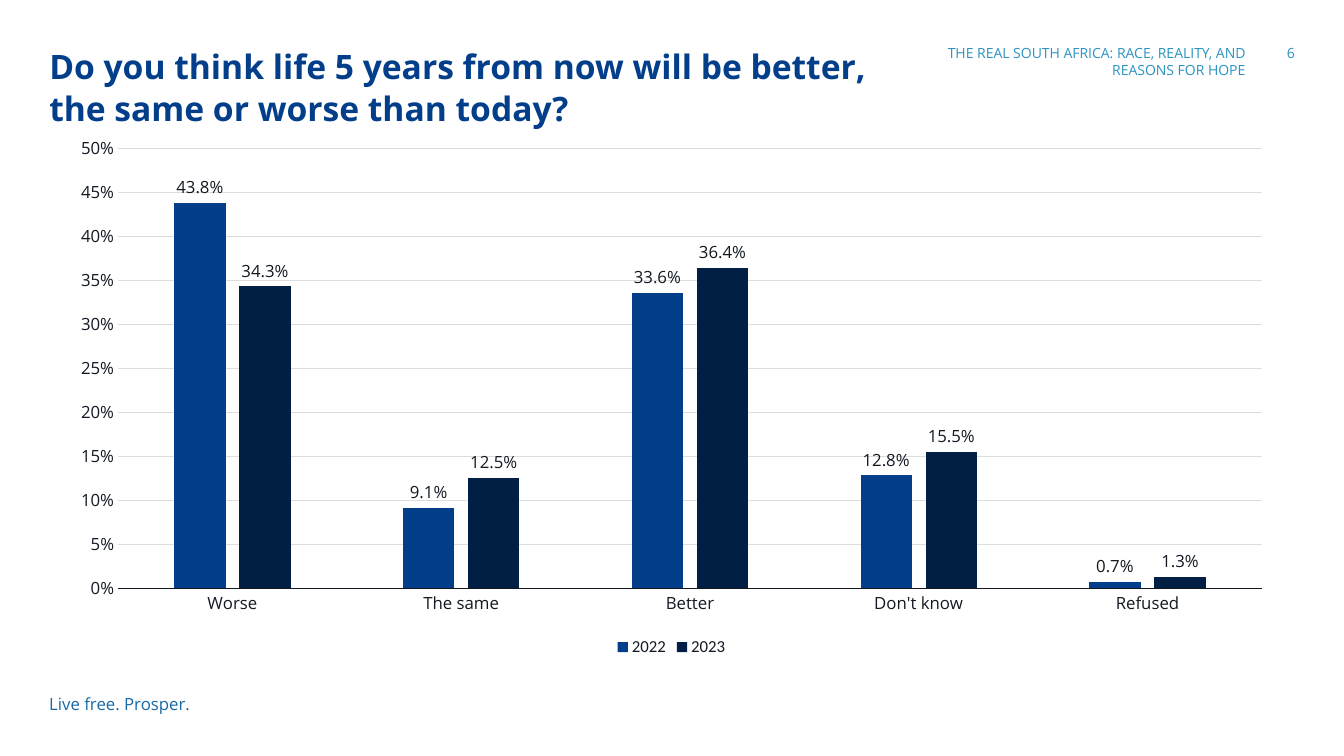
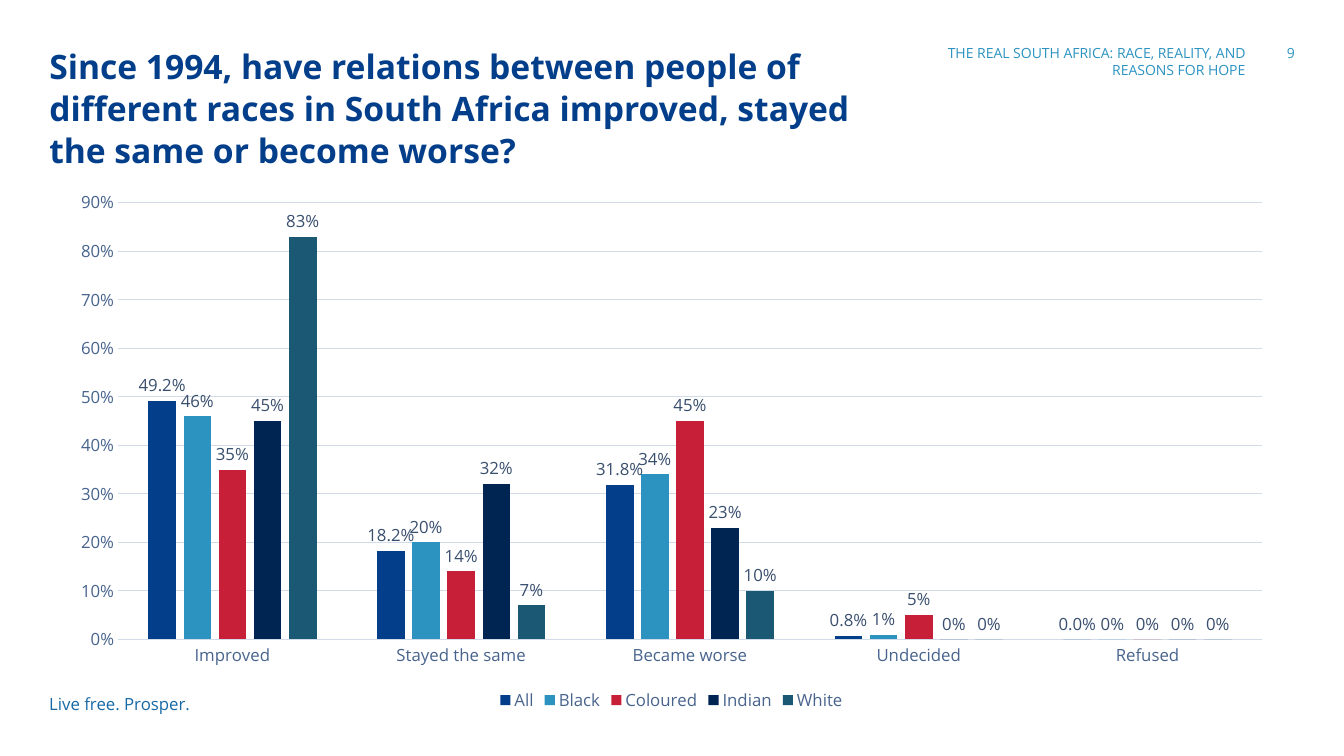
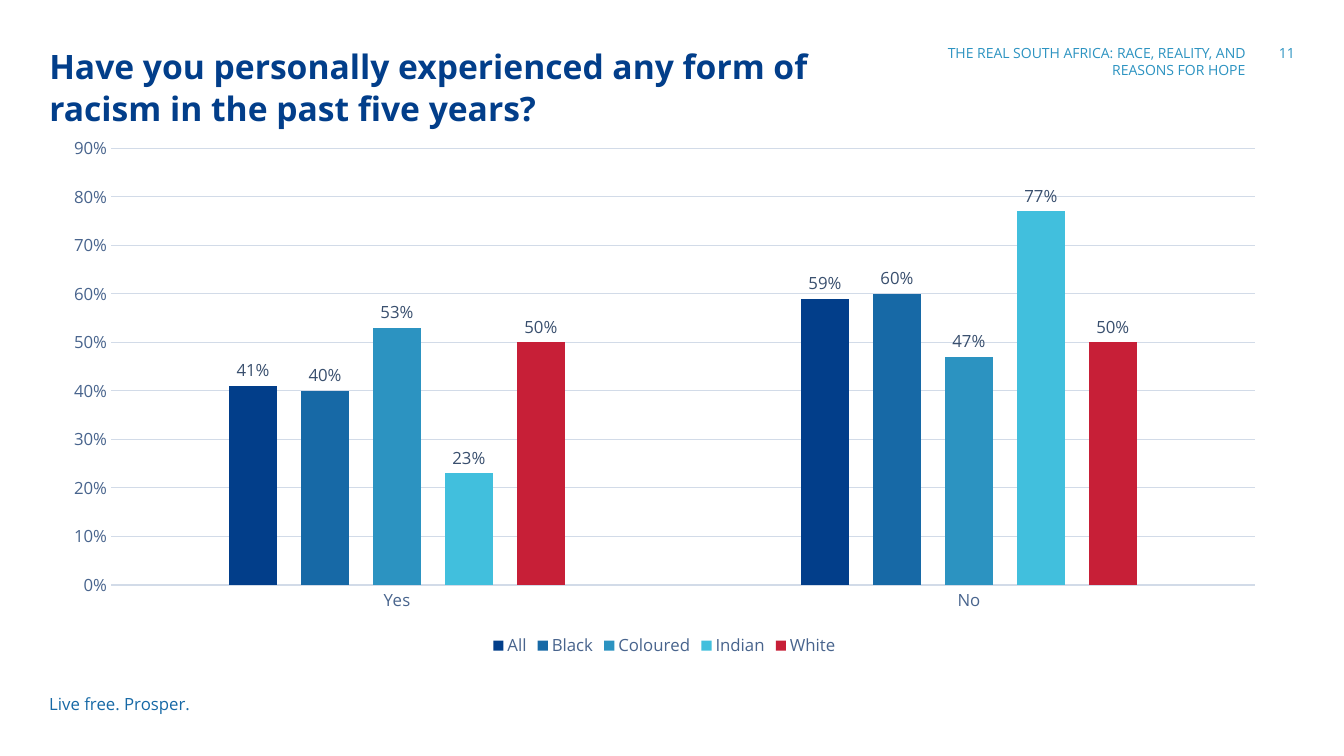
"""Builds three survey slides, each a question over a clustered column chart."""
from pptx import Presentation
from pptx.chart.data import CategoryChartData
from pptx.dml.color import RGBColor
from pptx.enum.chart import XL_CHART_TYPE, XL_LABEL_POSITION, XL_LEGEND_POSITION, XL_TICK_MARK
from pptx.enum.text import MSO_AUTO_SIZE, PP_ALIGN
from pptx.util import Pt

PX = 9144
FACE = "Open Sans"
HUES = {
    "navy": "023E8A", "blue": "1769A6", "sky": "2C93C1", "aqua": "41BFDD",
    "red": "C71F37", "night": "011F45", "ink": "012553", "teal": "1A5874",
    "black": "121923", "slate": "48648D", "dusk": "394F6E",
    "mist": "D2DBE8", "grey": "DDDDDD",
}


def style(font, hue, size=12, face=FACE, bold=False):
    font.name, font.size, font.bold = face, Pt(size), bold
    font.color.rgb = RGBColor.from_string(HUES[hue])


def write(slide, text, area, wrap=True, align=PP_ALIGN.LEFT, lead=None, **look):
    box = slide.shapes.add_textbox(*[n * PX for n in area])
    frame = box.text_frame
    frame.word_wrap = wrap
    frame.auto_size = MSO_AUTO_SIZE.NONE if wrap else MSO_AUTO_SIZE.SHAPE_TO_FIT_TEXT
    para = frame.paragraphs[0]
    para.alignment = align
    if lead:
        para.line_spacing = Pt(lead)
    run = para.add_run()
    run.text = text
    style(run.font, **look)


dark = {"axis": "black", "label": "black", "line": "black", "grid": "grey", "key": "Calibri"}
pale = {"axis": "slate", "label": "dusk", "line": "mist", "grid": "mist", "key": FACE}

pages = [
    {
        "num": 6,
        "title": "Do you think life 5 years from now will be better, the same or worse than today?",
        "left": 56, "top": 125, "look": dark, "gap": 219, "lap": -27, "max": 0.5, "step": 0.05,
        "cats": ["Worse", "The same", "Better", "Don't know", "Refused"],
        "rows": [
            ("2022", "navy", "0.0%", [0.438, 0.091, 0.336, 0.128, 0.007]),
            ("2023", "night", "0.0%", [0.343, 0.125, 0.364, 0.155, 0.013]),
        ],
    },
    {
        "num": 9,
        "title": "Since 1994, have relations between people of different races in South Africa "
                 "improved, stayed the same or become worse?",
        "left": 56, "top": 179, "look": pale, "gap": 219, "lap": -27, "max": 0.9, "step": 0.1,
        "cats": ["Improved", "Stayed the same", "Became worse", "Undecided", "Refused"],
        "rows": [
            ("All", "navy", "0.0%", [0.492, 0.182, 0.318, 0.008, 0]),
            ("Black", "sky", "0%", [0.46, 0.2, 0.34, 0.01, 0]),
            ("Coloured", "red", "0%", [0.35, 0.14, 0.45, 0.05, 0]),
            ("Indian", "ink", "0%", [0.45, 0.32, 0.23, 0, 0]),
            ("White", "teal", "0%", [0.83, 0.07, 0.1, 0, 0]),
        ],
    },
    {
        "num": 11,
        "title": "Have you personally experienced any form of racism in the past five years?",
        "left": 49, "top": 125, "look": pale, "gap": 500, "lap": -52, "max": 0.9, "step": 0.1,
        "cats": ["Yes", "No"],
        "rows": [
            ("All", "navy", "0%", [0.41, 0.59]),
            ("Black", "blue", "0%", [0.4, 0.6]),
            ("Coloured", "sky", "0%", [0.53, 0.47]),
            ("Indian", "aqua", "0%", [0.23, 0.77]),
            ("White", "red", "0%", [0.5, 0.5]),
        ],
    },
]

deck = Presentation()
deck.slide_width, deck.slide_height = 1333 * PX, 750 * PX

for page in pages:
    slide = deck.slides.add_slide(deck.slide_layouts[6])
    write(slide, "Live free. Prosper.", (39, 683, 170, 30), wrap=False, hue="blue")
    write(slide, str(page["num"]), (1245, 39, 49, 40), align=PP_ALIGN.RIGHT, hue="sky", size=10)
    write(slide, page["title"], (39, 39, 875, 86), lead=30, hue="navy", size=24, bold=True)
    write(slide, "THE REAL SOUTH AFRICA: RACE, REALITY, AND REASONS FOR HOPE",
          (915, 39, 330, 62), align=PP_ALIGN.RIGHT, hue="sky", size=10)

    data = CategoryChartData(number_format="0%")
    data.categories = page["cats"]
    for name, hue, form, vals in page["rows"]:
        data.add_series(name, vals)
    area = [n * PX for n in (page["left"], page["top"], 1220, 531)]
    chart = slide.shapes.add_chart(XL_CHART_TYPE.COLUMN_CLUSTERED, *area, data).chart
    look = page["look"]
    style(chart.font, "black", face=look["key"])
    chart.has_title = False
    chart.has_legend = True
    chart.legend.position = XL_LEGEND_POSITION.BOTTOM
    chart.legend.include_in_layout = False
    style(chart.legend.font, look["axis"], face=look["key"])

    base, scale = chart.category_axis, chart.value_axis
    for axis in (base, scale):
        axis.major_tick_mark = axis.minor_tick_mark = XL_TICK_MARK.NONE
        style(axis.tick_labels.font, look["axis"])
    scale.minimum_scale, scale.maximum_scale, scale.major_unit = 0, page["max"], page["step"]
    scale.tick_labels.number_format = "0%"
    scale.tick_labels.number_format_is_linked = False
    scale.format.line.fill.background()
    for line, hue in ((base.format.line, "line"), (scale.major_gridlines.format.line, "grid")):
        line.width = Pt(0.75)
        line.color.rgb = RGBColor.from_string(HUES[look[hue]])

    plot = chart.plots[0]
    plot.vary_by_categories = False
    plot.gap_width, plot.overlap = page["gap"], page["lap"]
    for bars, (name, hue, form, vals) in zip(plot.series, page["rows"]):
        bars.format.fill.solid()
        bars.format.fill.fore_color.rgb = RGBColor.from_string(HUES[hue])
        tags = bars.data_labels
        tags.show_value = True
        tags.position = XL_LABEL_POSITION.OUTSIDE_END
        tags.number_format = form
        tags.number_format_is_linked = False
        style(tags.font, look["label"])

deck.save("out.pptx")
